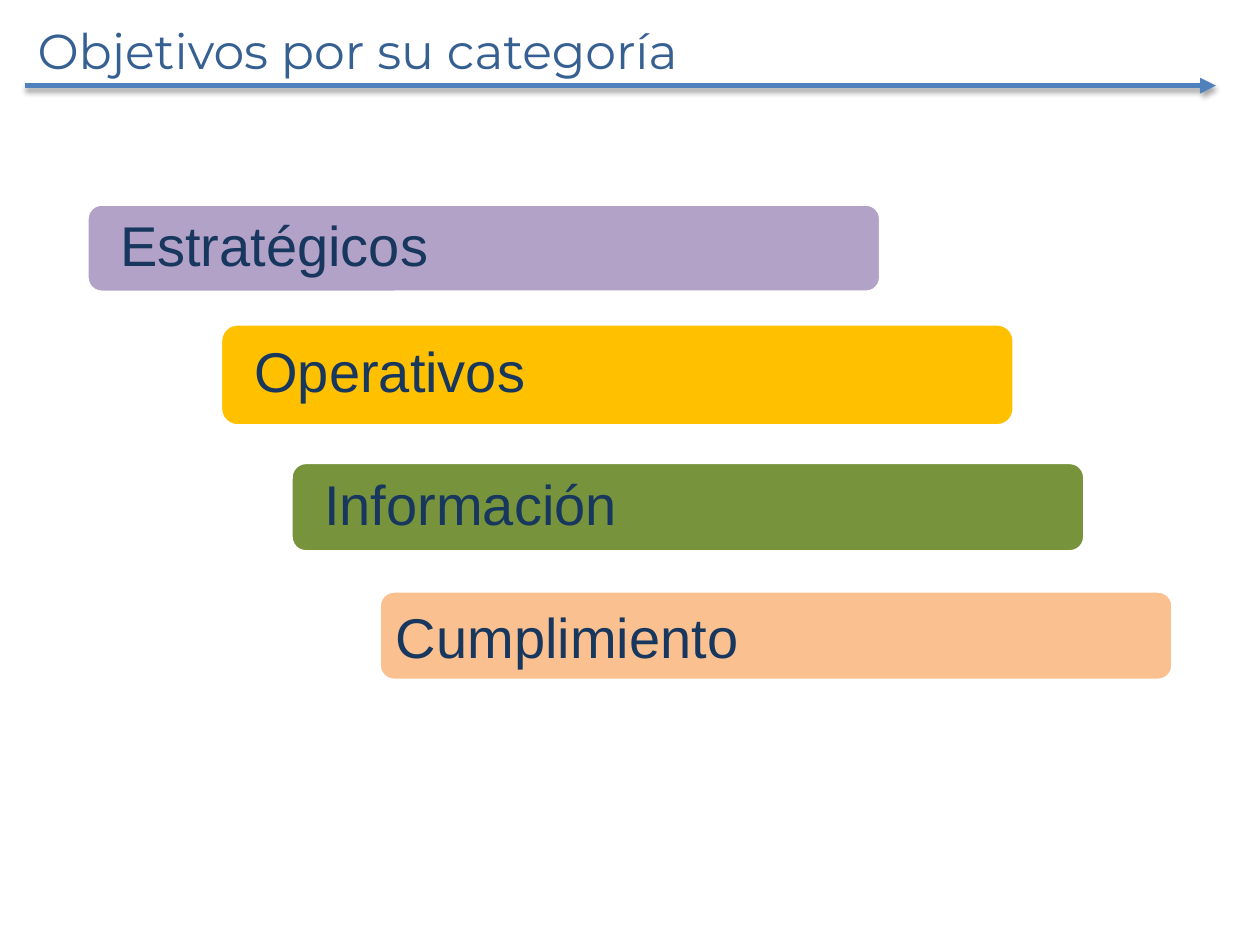
from dataclasses import dataclass

from lxml import etree
from pptx import Presentation
from pptx import util as u
from pptx.dml.color import RGBColor
from pptx.enum import shapes, text
from pptx.oxml import parse_xml
from pptx.oxml.ns import nsdecls, qn


@dataclass(frozen=True)
class Theme:
    title_font: str = "Montserrat"
    label_font: str = "Arial"
    title_size: int = 28
    label_size: int = 32
    title: str = "376092"
    label: str = "17375E"
    rule: str = "4F81BD"
    border: str = "FFFFFF"
    shadow: str = "000000"
    strategic: str = "B3A2C7"
    operational: str = "FFC000"
    information: str = "77933C"
    compliance: str = "FAC090"


class SlideBuilder:
    """Draws the title, the arrow and the category bars in one theme."""

    def __init__(self, slide, theme):
        self.slide = slide
        self.theme = theme

    def set_label(self, frame, wording, font, size, color):
        frame.word_wrap = True
        frame.text = wording
        paragraph = frame.paragraphs[0]
        paragraph.alignment = text.PP_ALIGN.LEFT
        style = paragraph.runs[0].font
        style.name = font
        style.size = u.Pt(size)
        style.color.rgb = RGBColor.from_string(color)
        return paragraph

    def title(self, wording, left, top, width, height):
        heading = self.slide.shapes.add_textbox(*map(u.Inches, (left, top, width, height)))
        self.set_label(heading.text_frame, wording, self.theme.title_font,
                       self.theme.title_size, self.theme.title)
        heading.text_frame.auto_size = text.MSO_AUTO_SIZE.SHAPE_TO_FIT_TEXT

    def arrow(self, left, right, y):
        rule = self.slide.shapes.add_connector(
            shapes.MSO_CONNECTOR.STRAIGHT, *map(u.Inches, (left, y, right, y)))
        rule.line.color.rgb = RGBColor.from_string(self.theme.rule)
        rule.line.width = u.Pt(3)
        properties = rule._element.spPr
        etree.SubElement(properties.find(qn("a:ln")), qn("a:tailEnd"), type="triangle")
        properties.append(parse_xml(
            f'<a:effectLst {nsdecls("a")}>'
            f'<a:outerShdw blurRad="{u.Pt(3.1)}" dist="{u.Pt(1.8)}" dir="5400000" rotWithShape="0">'
            f'<a:srgbClr val="{self.theme.shadow}"><a:alpha val="35000"/></a:srgbClr>'
            '</a:outerShdw></a:effectLst>'))

    def bar(self, wording, color, left, top, height, inset, spacing):
        category = self.slide.shapes.add_shape(
            shapes.MSO_SHAPE.ROUNDED_RECTANGLE, *map(u.Inches, (left, top, 6.3, height)))
        category.shadow.inherit = False
        category.fill.solid()
        category.fill.fore_color.rgb = RGBColor.from_string(color)
        category.line.color.rgb = RGBColor.from_string(self.theme.border)
        category.line.width = u.Pt(2)
        frame = category.text_frame
        label = self.set_label(frame, wording, self.theme.label_font,
                               self.theme.label_size, self.theme.label)
        label.line_spacing = spacing
        frame.vertical_anchor = text.MSO_ANCHOR.MIDDLE
        frame.margin_left = frame.margin_right = u.Inches(inset)
        frame.margin_top = frame.margin_bottom = 0


def main():
    theme = Theme()
    deck = Presentation()
    deck.slide_width, deck.slide_height = u.Inches(10), u.Inches(7.5)
    builder = SlideBuilder(deck.slides.add_slide(deck.slide_layouts[6]), theme)

    categories = (
        ("Estratégicos", theme.strategic, 0.69, 1.62, 0.7, 0.23, 0.9),
        ("Operativos", theme.operational, 1.75, 2.57, 0.81, 0.23, 0.9),
        ("Información", theme.information, 2.31, 3.67, 0.71, 0.23, 0.9),
        ("Cumplimiento", theme.compliance, 3.01, 4.69, 0.71, 0.1, 1.0),
    )
    for category in categories:
        builder.bar(*category)
    builder.arrow(0.2, 9.65, 0.68)
    builder.title("Objetivos por su categoría", 0.2, 0.11, 9.45, 0.57)
    deck.save("out.pptx")


if __name__ == "__main__":
    main()
